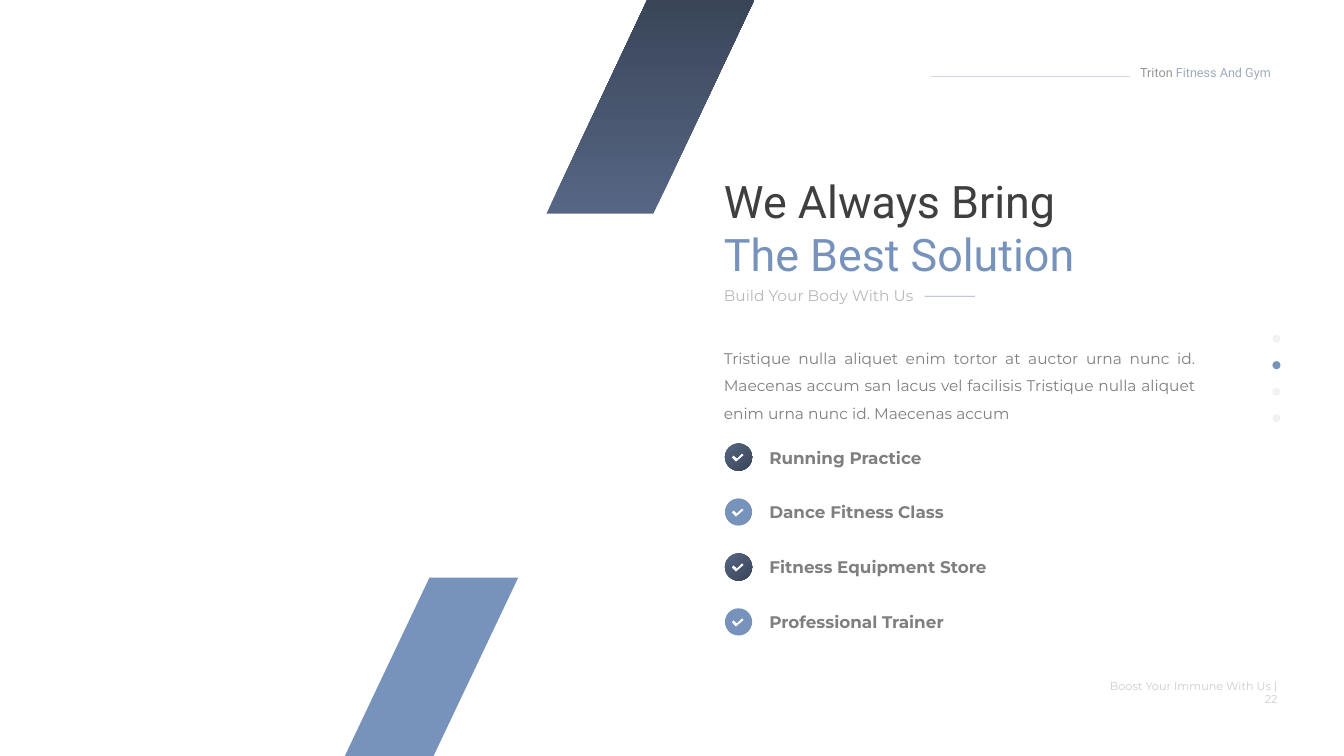
from lxml import etree
from pptx import Presentation, util as u
from pptx.dml.color import RGBColor
from pptx.enum import shapes, text
from pptx.oxml.ns import qn

COLORS = {
    "white": "FFFFFF", "blue": "7793BB", "slate": "566684", "night": "3A4558",
    "ink": "3F3F3F", "gray": "7F7F7F", "pale": "F2F2F2", "footer": "CCCCCC",
}
SERVICES = ["Running Practice", "Dance Fitness Class",
            "Fitness Equipment Store", "Professional Trainer"]
TICK = [(-0.02, 0.05), (-0.06, 0.01), (-0.045, -0.01),
        (-0.01, 0.02), (0.04, -0.03), (0.055, -0.015)]


def rgb(name):
    return RGBColor.from_string(COLORS[name])


def set_opacity(element, percent):
    for color in element.iter(qn("a:srgbClr")):
        etree.SubElement(color, qn("a:alpha")).set("val", str(percent * 1000))


def paint(shape, color, angle=None):
    """Fill with one color, or with the dark gradient when an angle is given."""
    shape.shadow.inherit = False
    shape.line.fill.background()
    if angle is None:
        shape.fill.solid()
        shape.fill.fore_color.rgb = rgb(color)
        return
    shape.fill.gradient()
    shape.fill.gradient_angle = angle
    for stop, name in zip(shape.fill.gradient_stops, ("slate", "night")):
        stop.color.rgb = rgb(name)


def add_polygon(slide, points, color, angle=None):
    points = [(u.Inches(x), u.Inches(y)) for x, y in points]
    builder = slide.shapes.build_freeform(*points[0])
    builder.add_line_segments(points[1:], close=True)
    paint(builder.convert_to_shape(), color, angle)


def add_circle(slide, left, top, size, color, angle=None):
    circle = slide.shapes.add_shape(
        shapes.MSO_SHAPE.OVAL, *map(u.Inches, (left, top, size, size)))
    paint(circle, color, angle)


def add_rule(slide, left, top, width, opacity):
    rule = slide.shapes.add_connector(
        shapes.MSO_CONNECTOR.STRAIGHT,
        *map(u.Inches, (left, top, left + width, top)))
    rule.line.width = u.Pt(0.5)
    rule.line.color.rgb = rgb("slate")
    set_opacity(rule._element, opacity)
    etree.SubElement(rule._element.spPr, qn("a:effectLst"))


def place(shape, box):
    shape.left, shape.top, shape.width, shape.height = map(u.Inches, box)
    frame = shape.text_frame
    frame.word_wrap = True
    frame.auto_size = text.MSO_AUTO_SIZE.NONE
    frame.vertical_anchor = text.MSO_ANCHOR.TOP
    return frame


def write(paragraph, parts, size, font, align=text.PP_ALIGN.LEFT,
          bold=False, opacity=None):
    """Write (text, color) parts as the runs of one paragraph."""
    paragraph.alignment = align
    paragraph.space_before = u.Pt(0)
    for words, color in parts:
        run = paragraph.add_run()
        run.text = words
        run.font.size = u.Pt(size)
        run.font.name = font
        run.font.bold = bold
        run.font.color.rgb = rgb(color)
    if opacity:
        set_opacity(paragraph._p, opacity)


def add_text(slide, box, parts, size, font, **style):
    frame = place(slide.shapes.add_textbox(0, 0, 0, 0), box)
    write(frame.paragraphs[0], parts, size, font, **style)
    return frame.paragraphs[0]


def add_band(slide, left, top, width, height, stripe, color, angle=None):
    right = left + width
    add_polygon(slide, [(right, top), (right - stripe, top),
                        (left, top + height), (left + stripe, top + height)],
                color, angle)


def add_header(slide, left, top):
    add_text(slide, (left + 1.98, top, 1.58, 0.25),
             [("Triton ", "ink"), ("Fitness And Gym", "slate")],
             9, "Roboto", opacity=55)
    add_rule(slide, left, top + 0.17, 1.98, 25)


def add_page_dots(slide, left, top, active=1, count=4, pitch=0.263):
    for index in range(count):
        color = "blue" if index == active else "pale"
        add_circle(slide, left, top + index * pitch, 0.08, color)


def add_heading(slide, left, top):
    frame = place(slide.shapes.title, (left, top, 3.9, 1.18))
    write(frame.paragraphs[0],
          [("We Always Bring ", "ink"), ("The Best Solution", "blue")],
          32, "Roboto")
    add_text(slide, (left, top + 1.12, 2.11, 0.29),
             [("Build Your Body With Us", "gray")], 11, "Montserrat", opacity=55)
    add_rule(slide, left + 2.09, top + 1.27, 0.5, 55)


def add_introduction(slide, box):
    paragraph = add_text(
        slide, box,
        [("Tristique nulla aliquet enim tortor at auctor urna nunc id. "
          "Maecenas accum san lacus vel facilisis Tristique nulla aliquet "
          "enim urna nunc id. Maecenas accum ", "gray")],
        11, "Montserrat", align=text.PP_ALIGN.JUSTIFY)
    paragraph.line_spacing = 1.5


def add_services(slide, left, top, pitch=0.545):
    # Check badges
    for index in range(len(SERVICES)):
        badge_top = top + 0.01 + index * pitch
        angle = 315 if index % 2 == 0 else None
        add_circle(slide, left, badge_top, 0.27, "blue", angle)
        center_x, center_y = left + 0.13, badge_top + 0.13
        add_polygon(slide, [(center_x + x, center_y + y) for x, y in TICK], "white")
    # Service names
    height = (len(SERVICES) - 1) * pitch + 0.3
    frame = place(slide.placeholders[1], (left + 0.34, top, 2.95, height))
    for index, service in enumerate(SERVICES):
        paragraph = frame.add_paragraph() if index else frame.paragraphs[0]
        write(paragraph, [(service, "gray")], 12, "Montserrat", bold=True)
        paragraph.space_after = u.Pt(24.6)
        properties = paragraph._p.get_or_add_pPr()
        properties.set("marL", "0")
        properties.set("indent", "0")
        etree.SubElement(properties, qn("a:buNone"))


def main():
    presentation = Presentation()
    presentation.slide_width = u.Inches(13.33)
    presentation.slide_height = u.Inches(7.5)
    slide = presentation.slides.add_slide(presentation.slide_layouts[1])

    # Slanted bands
    add_band(slide, 5.42, 0, 2.06, 2.12, 1.06, "slate", angle=90)
    add_band(slide, 3.42, 5.73, 1.72, 1.77, 0.88, "blue")
    # Frame of the page
    add_header(slide, 9.23, 0.59)
    add_page_dots(slide, 12.62, 3.32)
    add_text(slide, (10.8, 6.69, 1.97, 0.24),
             [("Boost Your Immune With Us | 22", "footer")],
             8, "Montserrat", align=text.PP_ALIGN.RIGHT)
    # Content
    add_heading(slide, 7.08, 1.67)
    add_introduction(slide, (7.08, 3.32, 4.88, 0.9))
    add_services(slide, 7.19, 4.39)

    presentation.save("out.pptx")


if __name__ == "__main__":
    main()
